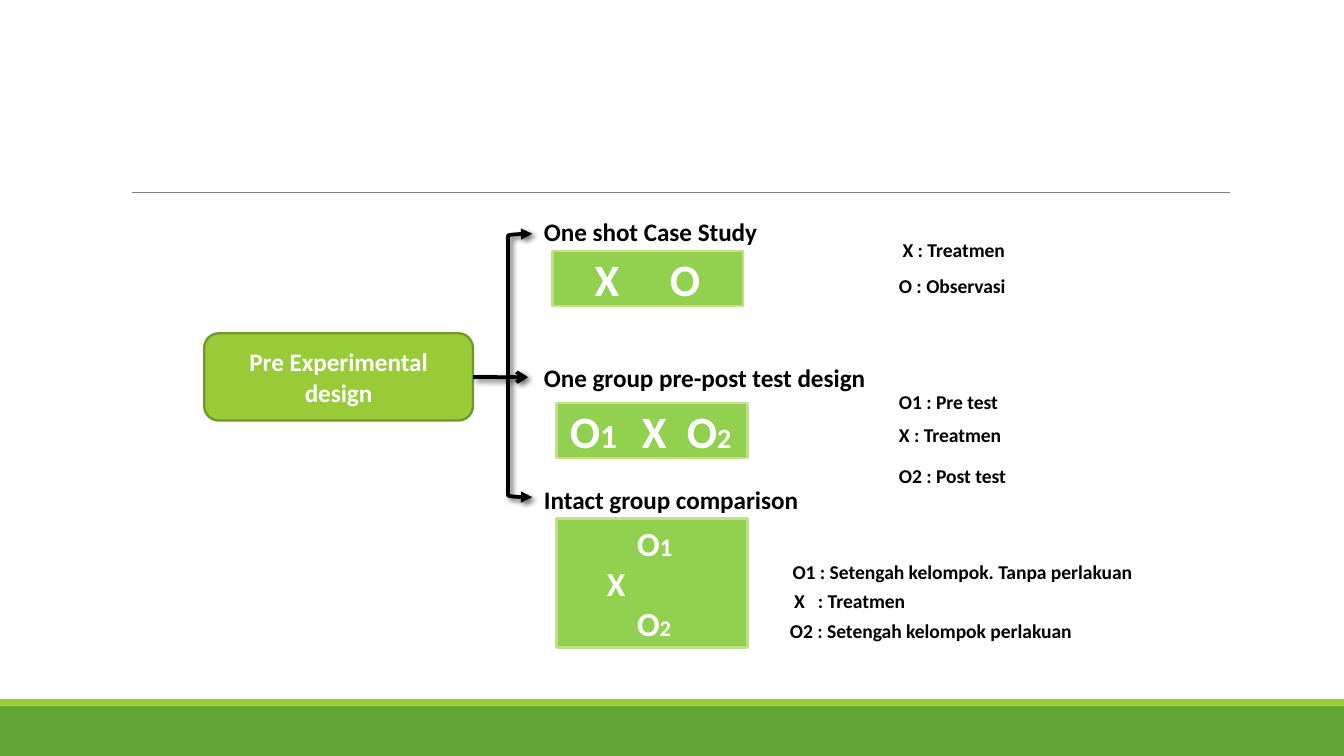
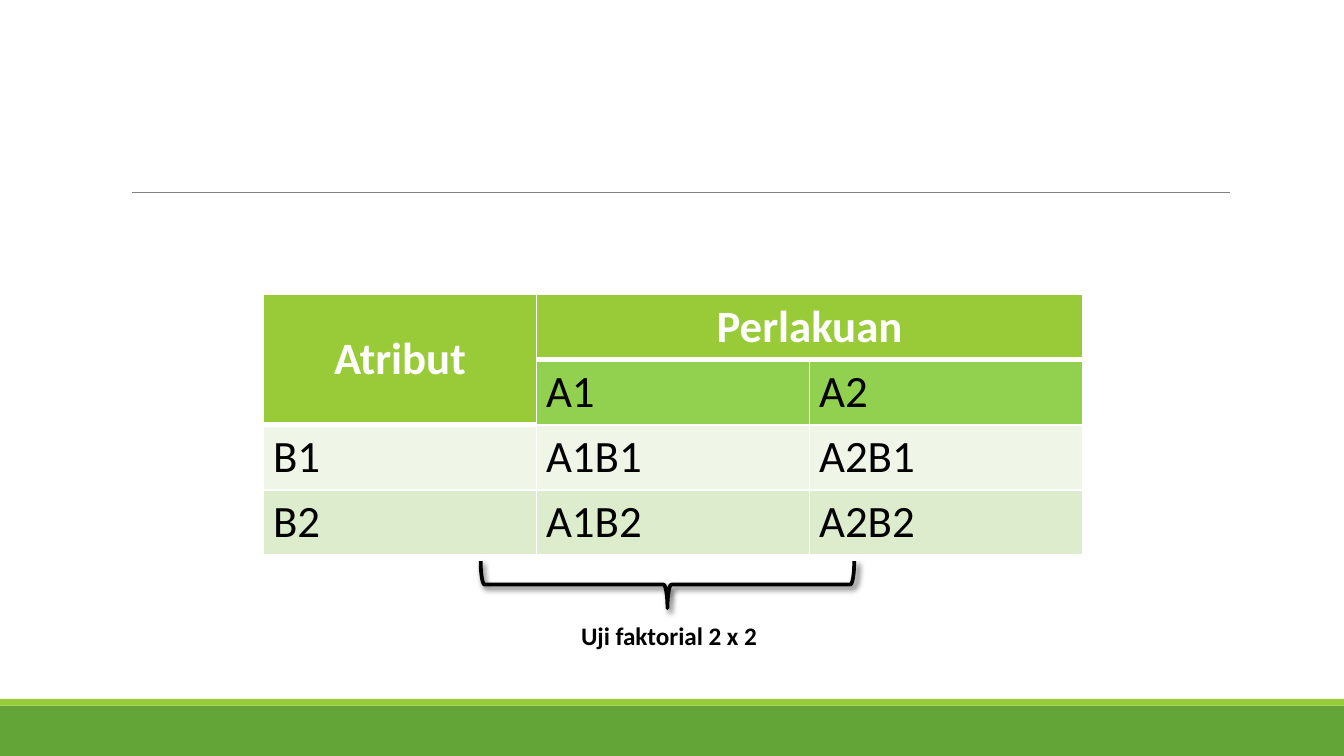
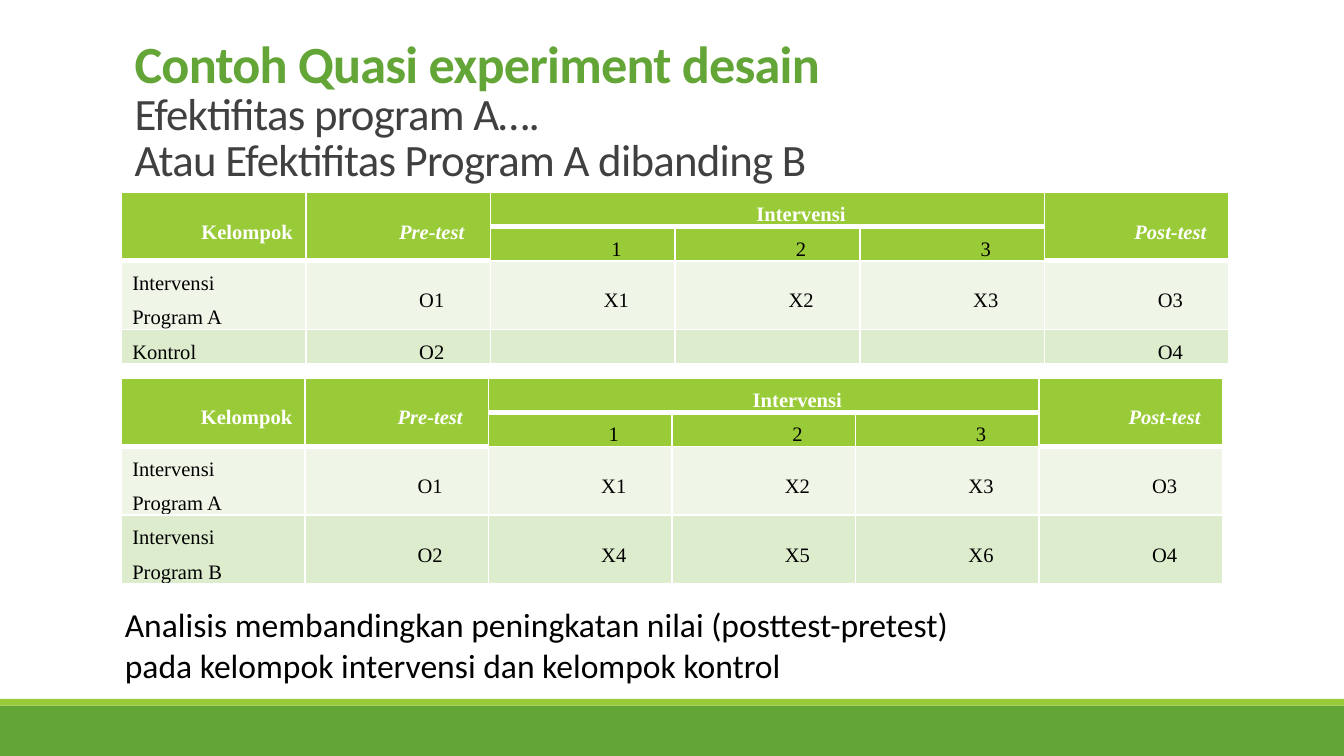
from typing import NamedTuple

from lxml import etree
from pptx import Presentation
from pptx.dml.color import RGBColor
from pptx.enum.shapes import MSO_CONNECTOR, MSO_SHAPE
from pptx.enum.text import MSO_ANCHOR, MSO_AUTO_SIZE, PP_ALIGN
from pptx.oxml.ns import qn
from pptx.util import Cm, Pt

RECT, ROUND_RECT = MSO_SHAPE.RECTANGLE, MSO_SHAPE.ROUNDED_RECTANGLE
LEFT_BRACKET, LEFT_BRACE = MSO_SHAPE.LEFT_BRACKET, MSO_SHAPE.LEFT_BRACE
STRAIGHT = MSO_CONNECTOR.STRAIGHT
LEFT, CENTER = PP_ALIGN.LEFT, PP_ALIGN.CENTER
TOP, MIDDLE, BOTTOM = MSO_ANCHOR.TOP, MSO_ANCHOR.MIDDLE, MSO_ANCHOR.BOTTOM
FIT_SHAPE, NO_FIT = MSO_AUTO_SIZE.SHAPE_TO_FIT_TEXT, MSO_AUTO_SIZE.NONE

WHITE = RGBColor(0xFF, 0xFF, 0xFF)
BLACK = RGBColor(0x00, 0x00, 0x00)
GRAY = RGBColor(0x80, 0x80, 0x80)
CHARCOAL = RGBColor(0x40, 0x40, 0x40)
GREEN = RGBColor(0x63, 0xA5, 0x37)
LIME = RGBColor(0x99, 0xCB, 0x38)
DARK_LIME = RGBColor(0x71, 0x96, 0x29)
BRIGHT_GREEN = RGBColor(0x92, 0xD0, 0x50)
PALE_LIME = RGBColor(0xC2, 0xE0, 0x88)
ROW_TINTS = (RGBColor(0xEF, 0xF6, 0xE8), RGBColor(0xDE, 0xEC, 0xCE))

SANS, SERIF = "Calibri", "Times New Roman"
SLIDE_W, SLIDE_H = 25.4, 14.29
LABEL = {"name": SANS, "size": Pt(13.5), "bold": True, "color": BLACK}
LEGEND = {**LABEL, "size": Pt(10.5)}
ROOT = {**LABEL, "color": WHITE}


class Design(NamedTuple):
    name: str
    top: float
    formula_box: tuple
    formula: list
    legend: list


DESIGNS = [
    Design("One shot Case Study", 3.96, (0.41, 0.79, 3.61, 1.04),
           [([("\tX\tO", 24)], (0.55, 1.97))],
           [(6.78, 0.41, "X : Treatmen"), (6.71, 1.09, "O : Observasi")]),
    Design("One group pre-post test design", 6.73, (0.49, 0.89, 3.61, 1.04),
           [([("O", 24), ("1\t", 18), ("X\tO", 24), ("2", 15)], (1.36, 2.21))],
           [(6.71, 0.51, "O1 : Pre test"), (6.71, 1.14, "X : Treatmen"),
            (6.71, 1.91, "O2 : Post test")]),
    Design("Intact group comparison", 9.04, (0.49, 0.76, 3.61, 2.44),
           [([("\tO", 18), ("1", 13.5)], (1.27,)),
            ([("\tX", 18)], (0.7,)),
            ([("\tO", 18), ("2", 12)], (1.27,))],
           [(4.7, 1.42, "O1 : Setengah kelompok. Tanpa perlakuan"),
            (4.73, 1.96, "X\t: Treatmen"),
            (4.65, 2.54, "O2 : Setengah kelompok perlakuan")]),
]


def set_all(target, values):
    for attribute, value in values.items():
        setattr(target, attribute, value)


def add_run(paragraph, text, style):
    run = paragraph.add_run()
    run.text = text
    set_all(run.font, {key: value for key, value in style.items() if key != "color"})
    run.font.color.rgb = style["color"]
    return run


def paragraphs_for(frame, count):
    return [frame.paragraphs[0]] + [frame.add_paragraph() for _ in range(count - 1)]


def set_tabs(paragraph, stops):
    tabs = etree.SubElement(paragraph._p.get_or_add_pPr(), qn("a:tabLst"))
    for stop in stops:
        etree.SubElement(tabs, qn("a:tab"), pos=str(Cm(stop)), algn="l")


def add_text(slide, left, top, width, height, lines, style, align=LEFT, wrap=True):
    frame = slide.shapes.add_textbox(Cm(left), Cm(top), Cm(width), Cm(height)).text_frame
    set_all(frame, {"word_wrap": wrap, "auto_size": FIT_SHAPE})
    for paragraph, line in zip(paragraphs_for(frame, len(lines)), lines):
        paragraph.alignment = align
        add_run(paragraph, line, style)
    return frame


def add_figure(slide, kind, left, top, width, height, fill=None, line=None, weight=1.25):
    figure = slide.shapes.add_shape(kind, Cm(left), Cm(top), Cm(width), Cm(height))
    for part, color in ((figure.fill, fill), (figure.line.fill, line)):
        if color is None:
            part.background()
        else:
            part.solid()
            part.fore_color.rgb = color
    if line is not None:
        figure.line.width = Pt(weight)
    figure.shadow.inherit = False
    set_all(figure.text_frame, {"word_wrap": True, "vertical_anchor": MIDDLE})
    return figure


def add_line(slide, start, end, color=BLACK, weight=2):
    line = slide.shapes.add_connector(STRAIGHT, *(Cm(value) for value in start + end))
    line.line.color.rgb = color
    line.line.width = Pt(weight)
    etree.SubElement(line.element.spPr, qn("a:effectLst"))
    return line


def add_arrowheads(item, **ends):
    outline = item.element.spPr.find(qn("a:ln"))
    for end, kind in ends.items():
        etree.SubElement(outline, qn(f"a:{end}"), type=kind)


def cast_shadow(item):
    effects = item.element.spPr.find(qn("a:effectLst"))
    shadow = etree.SubElement(effects, qn("a:outerShdw"), blurRad=str(Pt(3)),
                              dist=str(Pt(2)), dir="2700000", rotWithShape="0")
    color = etree.SubElement(shadow, qn("a:srgbClr"), val=str(BLACK))
    etree.SubElement(color, qn("a:alpha"), val="60000")


def decorate_master(prs, slide):
    decoration = [
        add_figure(slide, RECT, 0, 13.34, SLIDE_W, 0.95, GREEN),
        add_figure(slide, RECT, 0, 13.21, SLIDE_W, 0.13, LIME),
        add_line(slide, (2.49, 3.63), (23.24, 3.63), GRAY, 0.5),
    ]
    for number, part in enumerate(decoration):
        part.element.xpath(".//p:cNvPr")[0].set("id", str(20 + number))
        prs.slide_master.shapes.element.insert(2 + number, part.element)


def draw_root(slide, left, top):
    root = add_figure(slide, ROUND_RECT, left, top, 5.08, 1.65, LIME, DARK_LIME)
    lines = ("Pre Experimental", "design")
    for paragraph, line in zip(paragraphs_for(root.text_frame, 2), lines):
        paragraph.alignment = CENTER
        add_run(paragraph, line, ROOT)
    return root


def draw_branches(slide, root, left, top):
    middle = 7.13
    bracket = add_figure(slide, LEFT_BRACKET, left, top, 0.46, 4.98, None, BLACK, 2)
    add_arrowheads(bracket, headEnd="triangle", tailEnd="triangle")
    arrow = add_line(slide, (left, middle), (left + 0.38, middle))
    add_arrowheads(arrow, tailEnd="arrow")
    stem = add_line(slide, (left - 0.66, middle), (left, middle))
    stem.begin_connect(root, 3)
    for part in (bracket, arrow, stem):
        cast_shadow(part)


def draw_design(slide, design, left):
    add_text(slide, left, design.top, 7.19, 0.84, [design.name], LABEL)
    dx, dy, width, height = design.formula_box
    formula = add_figure(slide, RECT, left + dx, design.top + dy, width, height,
                         BRIGHT_GREEN, PALE_LIME)
    paragraphs = paragraphs_for(formula.text_frame, len(design.formula))
    for paragraph, (symbols, stops) in zip(paragraphs, design.formula):
        paragraph.alignment = LEFT
        set_tabs(paragraph, stops)
        for symbol, size in symbols:
            add_run(paragraph, symbol, {**ROOT, "size": Pt(size)})
    for dx, dy, meaning in design.legend:
        frame = add_text(slide, left + dx, design.top + dy, 7.01, 0.71, [meaning], LEGEND)
        if "\t" in meaning:
            set_tabs(frame.paragraphs[0], (0.45,))


def set_borders(cell, top, bottom):
    properties = cell._tc.get_or_add_tcPr()
    widths = {"lnL": 1, "lnR": 1, "lnT": top, "lnB": bottom}
    for position, (side, width) in enumerate(widths.items()):
        border = etree.Element(qn(f"a:{side}"), w=str(Pt(width)))
        fill = etree.SubElement(border, qn("a:solidFill"))
        etree.SubElement(fill, qn("a:srgbClr"), val=str(WHITE))
        properties.insert(position, border)


def fill_cell(cell, text, style, margins, anchor, align, spacing, indent):
    set_all(cell, {**margins, "vertical_anchor": anchor})
    lines = text.split("\n")
    for paragraph, line in zip(paragraphs_for(cell.text_frame, len(lines)), lines):
        set_all(paragraph, {"alignment": align, "line_spacing": spacing})
        paragraph._p.get_or_add_pPr().set("marL", str(Cm(indent)))
        if line:
            add_run(paragraph, line, style)
        else:
            size = str(int(style["size"].pt * 100))
            etree.SubElement(paragraph._p, qn("a:endParaRPr"), sz=size)


def draw_matrix(slide, left, top, column_width, row_heights, rows, merges, subheading_fill,
                font, inset, spacing=1.0, indent=0, label_indent=0, body_align=LEFT,
                body_anchor=TOP, middle_headings=True):
    columns = len(rows[0])
    matrix = slide.shapes.add_table(
        len(rows), columns, Cm(left), Cm(top),
        Cm(column_width * columns), Cm(sum(row_heights))).table
    set_all(matrix, {"first_row": False, "horz_banding": False})
    for column in matrix.columns:
        column.width = Cm(column_width)
    for row, height in zip(matrix.rows, row_heights):
        row.height = Cm(height)
    headings = {(0, c) for c in range(columns)}
    for (r1, c1), (r2, c2) in merges:
        matrix.cell(r1, c1).merge(matrix.cell(r2, c2))
        headings |= {(r, c) for r in range(r1, r2 + 1) for c in range(c1, c2 + 1)}
    margins = {"margin_left": Cm(0.18), "margin_right": Cm(0.18),
               "margin_top": Cm(inset), "margin_bottom": Cm(inset)}
    for r, texts in enumerate(rows):
        for c, text in enumerate(texts):
            cell = matrix.cell(r, c)
            heading = (r, c) in headings
            cell.fill.solid()
            cell.fill.fore_color.rgb = (
                LIME if heading else subheading_fill if r == 1 else ROW_TINTS[r % 2])
            under_heading = not heading and (r - 1, c) in headings
            set_borders(cell, 3 if under_heading else 1, 3 if heading else 1)
            if cell.is_spanned:
                continue
            label = r > 1 and c == 0
            style = {**font, "bold": heading, "italic": text.endswith("-test"),
                     "color": WHITE if heading else BLACK}
            anchor = MIDDLE if heading else TOP if r == 1 else body_anchor
            align = CENTER if heading else LEFT if label else body_align
            fill_cell(cell, text, style, margins, anchor, align, spacing,
                      label_indent if label else indent)


def draw_factorial(slide, left, top):
    draw_matrix(slide, left, top, 5.16, [1.21] * 4,
                [("Atribut", "Perlakuan", ""), ("", "A1", "A2"),
                 ("B1", "A1B1", "A2B1"), ("B2", "A1B2", "A2B2")],
                [((0, 0), (1, 0)), ((0, 1), (0, 2))], BRIGHT_GREEN,
                {"name": SANS, "size": Pt(24)}, 0.1)
    brace = add_figure(slide, LEFT_BRACE, left + 7.19, top + 1.96, 0.89, 7.06, None, BLACK, 2)
    brace.rotation = 270
    cast_shadow(brace)
    add_text(slide, left + 4.16, top + 6.05, 7.01, 0.84, ["Uji faktorial 2 x 2"], LABEL, CENTER)


def draw_groups(slide, left, top, column_width, row_heights, second_group):
    rows = [("Kelompok", "Pre-test", "Intervensi", "", "", "Post-test"),
            ("", "", "1", "2", "3", ""),
            ("Intervensi\nProgram A", "O1", "X1", "X2", "X3", "O3"),
            second_group]
    merges = [((0, c), (1, c)) for c in (0, 1, 5)] + [((0, 2), (0, 4))]
    draw_matrix(slide, left, top, column_width, row_heights, rows, merges, LIME,
                {"name": SERIF, "size": Pt(11)}, 0, 1.5, 1.27, 0.03, CENTER, MIDDLE)


def write_title(slide, left, top, width, height):
    title = slide.shapes.title
    set_all(title, {"left": Cm(left), "top": Cm(top), "width": Cm(width), "height": Cm(height)})
    set_all(title.text_frame,
            {"vertical_anchor": BOTTOM, "word_wrap": True, "auto_size": NO_FIT})
    paragraph = title.text_frame.paragraphs[0]
    set_all(paragraph, {"alignment": LEFT, "line_spacing": 0.85})
    lines = [("Contoh Quasi experiment desain", 28, True, GREEN),
             ("Efektifitas program A…. ", 24, False, CHARCOAL),
             ("Atau Efektifitas Program A dibanding B", 24, False, CHARCOAL)]
    for number, (line, size, bold, color) in enumerate(lines):
        if number:
            paragraph.add_line_break()
            etree.SubElement(paragraph._p[-1], qn("a:rPr"), sz=str(lines[number - 1][1] * 100))
        run = add_run(paragraph, line,
                      {"name": SANS, "size": Pt(size), "bold": bold, "color": color})
        run._r.get_or_add_rPr().set("spc", "-40")


def build_pre_experimental(slide):
    root = draw_root(slide, 3.86, 6.3)
    draw_branches(slide, root, 9.6, 4.42)
    for design in DESIGNS:
        draw_design(slide, design, 10.03)


def build_quasi_experiment(slide):
    write_title(slide, 2.29, 0.61, 20.96, 3.02)
    draw_groups(slide, 2.29, 7.14, 3.47, (0.65, 0.65, 1.28, 1.28),
                ("Intervensi\nProgram B", "O2", "X4", "X5", "X6", "O4"))
    draw_groups(slide, 2.29, 3.63, 3.49, (0.65, 0.65, 1.28, 0.65),
                ("Kontrol", "O2", "", "", "", "O4"))
    add_text(slide, 2.11, 11.3, 16.41, 1.8,
             ["Analisis membandingkan peningkatan nilai (posttest-pretest)",
              "pada kelompok intervensi dan kelompok kontrol"],
             {"name": SANS, "size": Pt(18), "color": BLACK}, wrap=False)


def main():
    prs = Presentation()
    set_all(prs, {"slide_width": Cm(SLIDE_W), "slide_height": Cm(SLIDE_H)})
    title_only, blank = prs.slide_layouts[5], prs.slide_layouts[6]
    designs = prs.slides.add_slide(blank)
    decorate_master(prs, designs)
    build_pre_experimental(designs)
    draw_factorial(prs.slides.add_slide(blank), 4.98, 5.56)
    build_quasi_experiment(prs.slides.add_slide(title_only))
    prs.save("out.pptx")


if __name__ == "__main__":
    main()
